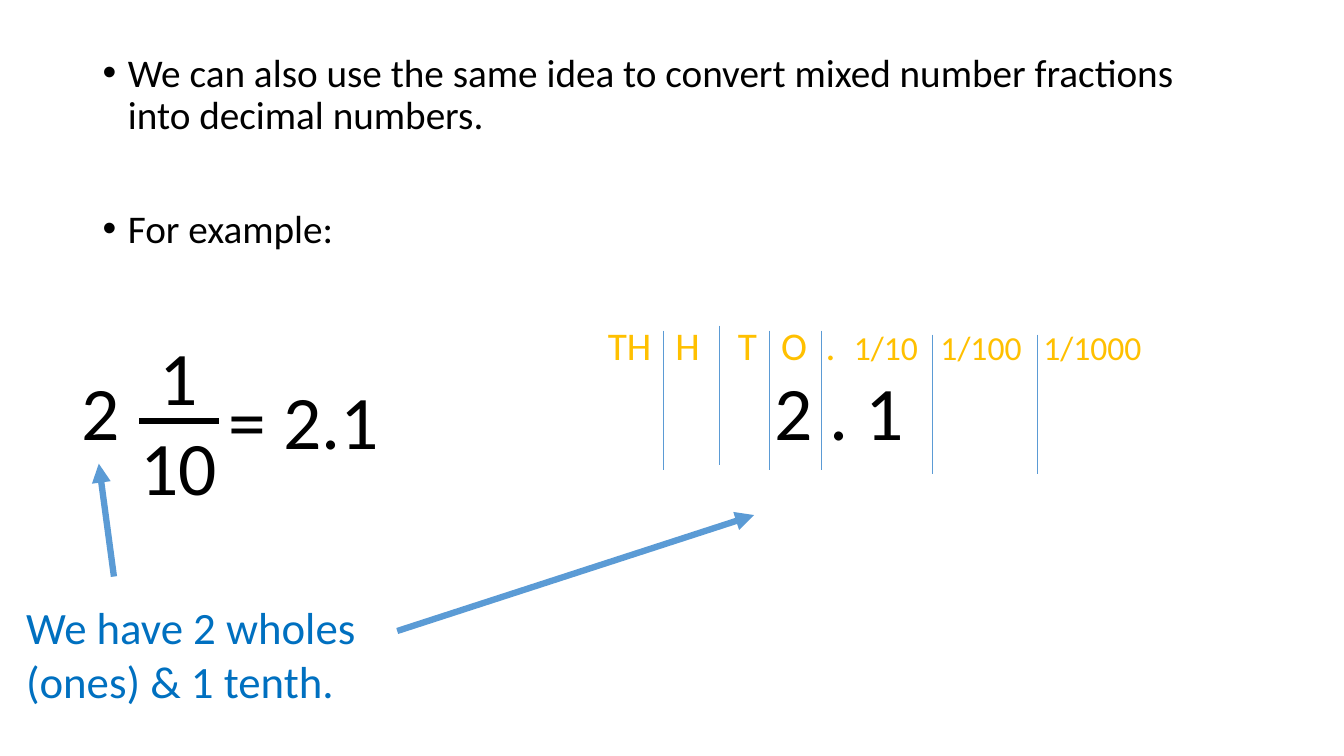
from lxml import etree
from pptx import Presentation
from pptx.dml.color import RGBColor
from pptx.enum.shapes import MSO_CONNECTOR
from pptx.enum.text import PP_ALIGN
from pptx.oxml.ns import qn
from pptx.util import Inches, Pt

BLACK = RGBColor(0x00, 0x00, 0x00)
SKY = RGBColor(0x5B, 0x9B, 0xD5)
BLUE = RGBColor(0x00, 0x70, 0xC0)
GOLD = RGBColor(0xFF, 0xC0, 0x00)

prs = Presentation()
prs.slide_width, prs.slide_height = Inches(13.33), Inches(7.5)
slide = prs.slides.add_slide(prs.slide_layouts[6])


def add_text(box, paragraphs, color):
    """Add a text box; each paragraph is a list of (text, size) runs."""
    frame = slide.shapes.add_textbox(*map(Inches, box)).text_frame
    frame.word_wrap = True
    for i, runs in enumerate(paragraphs):
        paragraph = frame.paragraphs[0] if i == 0 else frame.add_paragraph()
        for text, size in runs:
            run = paragraph.add_run()
            run.text = text
            run.font.name = "Calibri"
            run.font.size = Pt(size)
            run.font.color.rgb = color
    return frame.paragraphs


def add_line(start, end, color, width, arrow=False):
    line = slide.shapes.add_connector(
        MSO_CONNECTOR.STRAIGHT, *map(Inches, start + end))
    line.line.color.rgb = color
    line.line.width = Pt(width)
    if arrow:
        etree.SubElement(line.line._get_or_add_ln(), qn("a:tailEnd"), type="triangle")
    etree.SubElement(line._element.spPr, qn("a:effectLst"))


# Introduction
intro = add_text((0.92, 0.48, 11.5, 2.71), [
    [("We can also use the same idea to convert mixed number fractions "
      "into decimal numbers.", 28)],
    [("For example:", 28)],
], BLACK)
for bullet, space_before in zip(intro, (10, 51)):
    bullet.line_spacing = 0.9
    bullet.space_before = Pt(space_before)
    props = bullet._p.get_or_add_pPr()
    props.set("marL", str(Inches(0.25)))
    props.set("indent", str(Inches(-0.25)))
    etree.SubElement(props, qn("a:buFont"), typeface="Arial")
    etree.SubElement(props, qn("a:buChar"), char="•")

# Mixed number and its decimal
for part in add_text((0.98, 3.22, 1.59, 1.92), [[("1", 54)], [("10", 54)]], BLACK):
    part.alignment = PP_ALIGN.CENTER
add_text((2.17, 3.66, 2.26, 1.01), [[("= 2.1", 54)]], BLACK)
add_line((1.38, 4.18), (2.17, 4.18), BLACK, 4.5)
add_text((0.71, 3.57, 0.68, 1.01), [[("2", 54)]], BLACK)

# Place value chart: tab stops set the column headings
headings = add_text((5.93, 3.14, 6.03, 0.57), [
    [("TH\tH\tT\tO\t.\t", 28), ("1/10\t1/100\t1/1000", 24)],
], GOLD)[0]
tabs = etree.SubElement(headings._p.get_or_add_pPr(), qn("a:tabLst"))
for stop in (0.67, 1.29, 1.72, 2.16, 2.44, 3.3, 4.32):
    etree.SubElement(tabs, qn("a:tab"), pos=str(Inches(stop)), algn="l")

for x, top in ((6.58, 3.28), (7.13, 3.23), (7.63, 3.28),
               (8.15, 3.28), (9.25, 3.32), (10.29, 3.32)):
    add_line((x, top), (x, top + 1.38), SKY, 0.5)
add_text((7.58, 3.57, 3.39, 1.01), [[("2 . 1", 54)]], BLACK)

# Explanation
add_text((0.16, 5.9, 4.03, 1.18), [[("We have 2 wholes (ones) & 1 tenth.", 32)]], BLUE)
add_line((1.13, 5.72), (0.98, 4.6), SKY, 4.5, arrow=True)
add_line((3.94, 6.26), (7.48, 5.11), SKY, 4.5, arrow=True)

prs.save("out.pptx")
